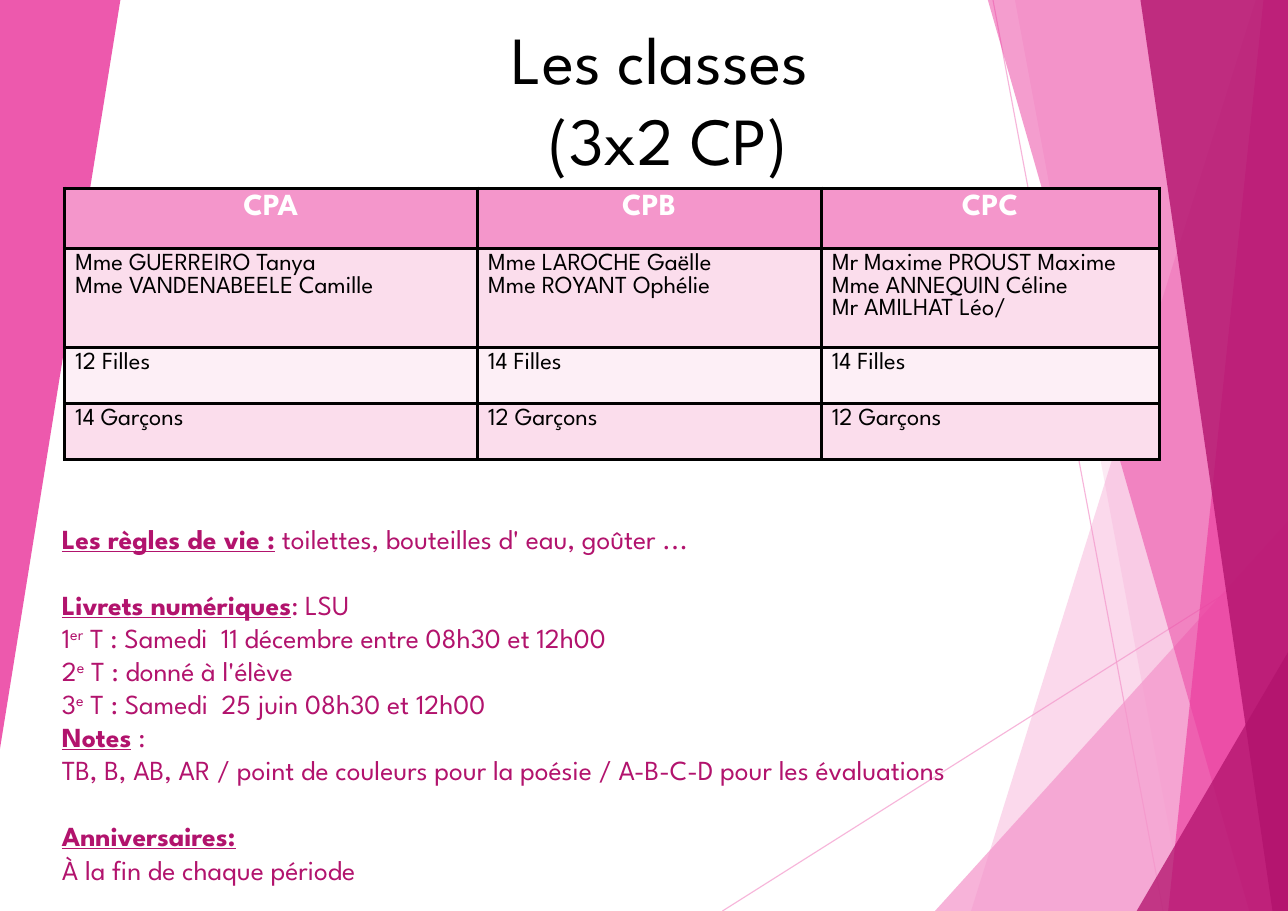
"""Build the slide that presents the three CP classes and the school year notes."""
from lxml import etree
from pptx import Presentation
from pptx.dml.color import RGBColor
from pptx.enum.shapes import MSO_CONNECTOR
from pptx.enum.text import MSO_ANCHOR, MSO_AUTO_SIZE, PP_ALIGN
from pptx.oxml.ns import qn
from pptx.util import Inches, Pt

STRAIGHT = MSO_CONNECTOR.STRAIGHT
TOP = MSO_ANCHOR.TOP
NO_FIT = MSO_AUTO_SIZE.NONE
LEFT, CENTER = PP_ALIGN.LEFT, PP_ALIGN.CENTER

WIDTH, HEIGHT = Inches(11.69), Inches(8.27)
FONT = "League Spartan"
BLANK_LINE = 21.6
COLORS = {
    "light": "F496CB", "bright": "EB3D9F", "dark": "B2136D",
    "row": "FBDDEC", "pale row": "FDEFF6", "white": "FFFFFF", "black": "000000",
}

TITLE = ["Les classes ", "(3x2 CP)"]
CLASSES = [
    [["CPA"], ["CPB"], ["CPC"]],
    [["Mme GUERREIRO Tanya", "Mme VANDENABEELE Camille"],
     ["Mme LAROCHE Gaëlle", "Mme ROYANT Ophélie"],
     ["Mr Maxime PROUST Maxime", "Mme ANNEQUIN Céline", "Mr AMILHAT Léo/"]],
    [["12 Filles"], ["14 Filles"], ["14 Filles"]],
    [["14 Garçons"], ["12 Garçons"], ["12 Garçons"]],
]
HEADING = {"bold": True, "underline": True}
RAISED = {"raised": True}
NOTES = [
    (0, [("Les règles de vie :", HEADING),
         (" toilettes, bouteilles d' eau, goûter ...", {})]),
    (BLANK_LINE, [("Livrets numériques", HEADING), (": LSU", {})]),
    (0, [("1", {}), ("er", RAISED),
         (" T : Samedi  11 décembre entre 08h30 et 12h00", {})]),
    (0, [("2", {}), ("e", RAISED), (" T : donné à l'élève", {})]),
    (0, [("3", {}), ("e", RAISED), (" T : Samedi  25 juin 08h30 et 12h00", {})]),
    (0, [("Notes", HEADING), (" :", {})]),
    (0, [("TB, B, AB, AR / point de couleurs pour la poésie"
          " / A-B-C-D pour les évaluations", {})]),
    (BLANK_LINE, [("Anniversaires:", HEADING)]),
    (0, [("À la fin de chaque période", {})]),
]

# Positions are percentages of the slide's width and height.
RAYS = [((56.1, 100), (100, 60.8)), ((77.1, 0), (90.3, 100))]
FACETS = [
    ("light", 36, [(97.5, 0), (75.4, 100), (100, 100), (100, 0)]),
    ("light", 20, [(78.8, 0), (91.96, 100), (100, 100), (100, 0)]),
    ("light", 72, [(72.6, 100), (100, 57.2), (100, 100)]),
    ("bright", 50, [(76.7, 0), (97, 100), (100, 100), (100, 0)]),
    ("bright", 66, [(98.1, 0), (90.7, 100), (100, 100), (100, 0)]),
    ("dark", 80, [(88.55, 0), (98.8, 100), (100, 100), (100, 0)]),
    ("dark", 76, [(88.25, 100), (100, 71.6), (100, 100)]),
    ("bright", 85, [(0, 0), (9.35, 0), (0, 82.2)]),
]
TITLE_BOX = (29.8, 1.33, 44.2, 19.3)
NOTES_BOX = (3.95, 56.7, 87.2, 41.5)
TABLE_CORNER = (5, 20.65)
COLUMNS = [32.05, 26.7, 26.25]
ROWS = [6.6, 10.85, 6.15, 6.15]
ROW_FILLS = ["light", "row", "pale row", "row"]


def across(share):
    return int(WIDTH * share / 100)


def down(share):
    return int(HEIGHT * share / 100)


def rgb(name):
    return RGBColor.from_string(COLORS[name])


def set_opacity(shape, percent):
    for color in shape.element.spPr.iter(qn("a:srgbClr")):
        etree.SubElement(color, qn("a:alpha"), val=str(percent * 1000))


def write(para, text, size=18, color="black", bold=False, underline=False, raised=False):
    span = para.add_run()
    span.text = text
    font = span.font
    font.name, font.size, font.bold, font.underline = FONT, Pt(size), bold, underline
    font.color.rgb = rgb(color)
    if raised:
        span._r.get_or_add_rPr().set("baseline", "30000")


def fill_frame(frame, lines, align=LEFT, **style):
    for index, (gap, spans) in enumerate(lines):
        para = frame.add_paragraph() if index else frame.paragraphs[0]
        para.alignment, para.line_spacing = align, 1.0
        para.space_before, para.space_after = Pt(gap), Pt(0)
        for text, extra in spans:
            write(para, text, **style, **extra)


def plain(lines):
    return [(0, [(line, {})]) for line in lines]


def place(slide, box, position):
    left, top, width, height = position
    box.left, box.top = across(left), down(top)
    box.width, box.height = across(width), down(height)
    frame = box.text_frame
    frame.word_wrap, frame.auto_size, frame.vertical_anchor = True, NO_FIT, TOP
    slide.shapes.element.append(box.element)
    return frame


def add_background(slide):
    for start, end in RAYS:
        ray = slide.shapes.add_connector(
            STRAIGHT, across(start[0]), down(start[1]), across(end[0]), down(end[1]))
        ray.line.color.rgb, ray.line.width = rgb("light"), Pt(0.75)
        set_opacity(ray, 70)
        etree.SubElement(ray.element.spPr, qn("a:effectLst"))
    for color, opacity, shares in FACETS:
        points = [(across(x), down(y)) for x, y in shares]
        builder = slide.shapes.build_freeform(*points[0])
        builder.add_line_segments(points[1:], close=True)
        facet = builder.convert_to_shape()
        facet.shadow.inherit = False
        facet.fill.solid()
        facet.fill.fore_color.rgb = rgb(color)
        set_opacity(facet, opacity)
        facet.line.fill.background()


def add_borders(cell):
    properties = cell._tc.get_or_add_tcPr()
    for index, side in enumerate(("lnL", "lnR", "lnT", "lnB")):
        border = etree.Element(qn(f"a:{side}"), w=str(Pt(2.25)))
        paint = etree.SubElement(border, qn("a:solidFill"))
        etree.SubElement(paint, qn("a:srgbClr"), val=COLORS["black"])
        properties.insert(index, border)


def add_classes(slide):
    left, top = TABLE_CORNER
    table = slide.shapes.add_table(
        len(ROWS), len(COLUMNS), across(left), down(top),
        across(sum(COLUMNS)), down(sum(ROWS))).table
    for column, share in zip(table.columns, COLUMNS):
        column.width = across(share)
    for index, (row, share) in enumerate(zip(table.rows, ROWS)):
        row.height = down(share)
        style = {"size": 16}
        if index == 0:
            style = {"size": 20, "color": "white", "bold": True, "align": CENTER}
        for cell, lines in zip(row.cells, CLASSES[index]):
            cell.fill.solid()
            cell.fill.fore_color.rgb = rgb(ROW_FILLS[index])
            add_borders(cell)
            fill_frame(cell.text_frame, plain(lines), **style)


def main():
    deck = Presentation()
    deck.slide_width, deck.slide_height = WIDTH, HEIGHT
    slide = deck.slides.add_slide(deck.slide_layouts[1])
    add_background(slide)
    title, notes = slide.placeholders
    fill_frame(place(slide, title, TITLE_BOX), plain(TITLE), align=CENTER, size=44)
    add_classes(slide)
    frame = place(slide, notes, NOTES_BOX)
    fill_frame(frame, NOTES, color="dark")
    for para in frame.paragraphs:
        properties = para._p.get_or_add_pPr()
        properties.set("marL", "0")
        properties.set("indent", "0")
        etree.SubElement(properties, qn("a:buNone"))
    deck.save("out.pptx")


if __name__ == "__main__":
    main()
